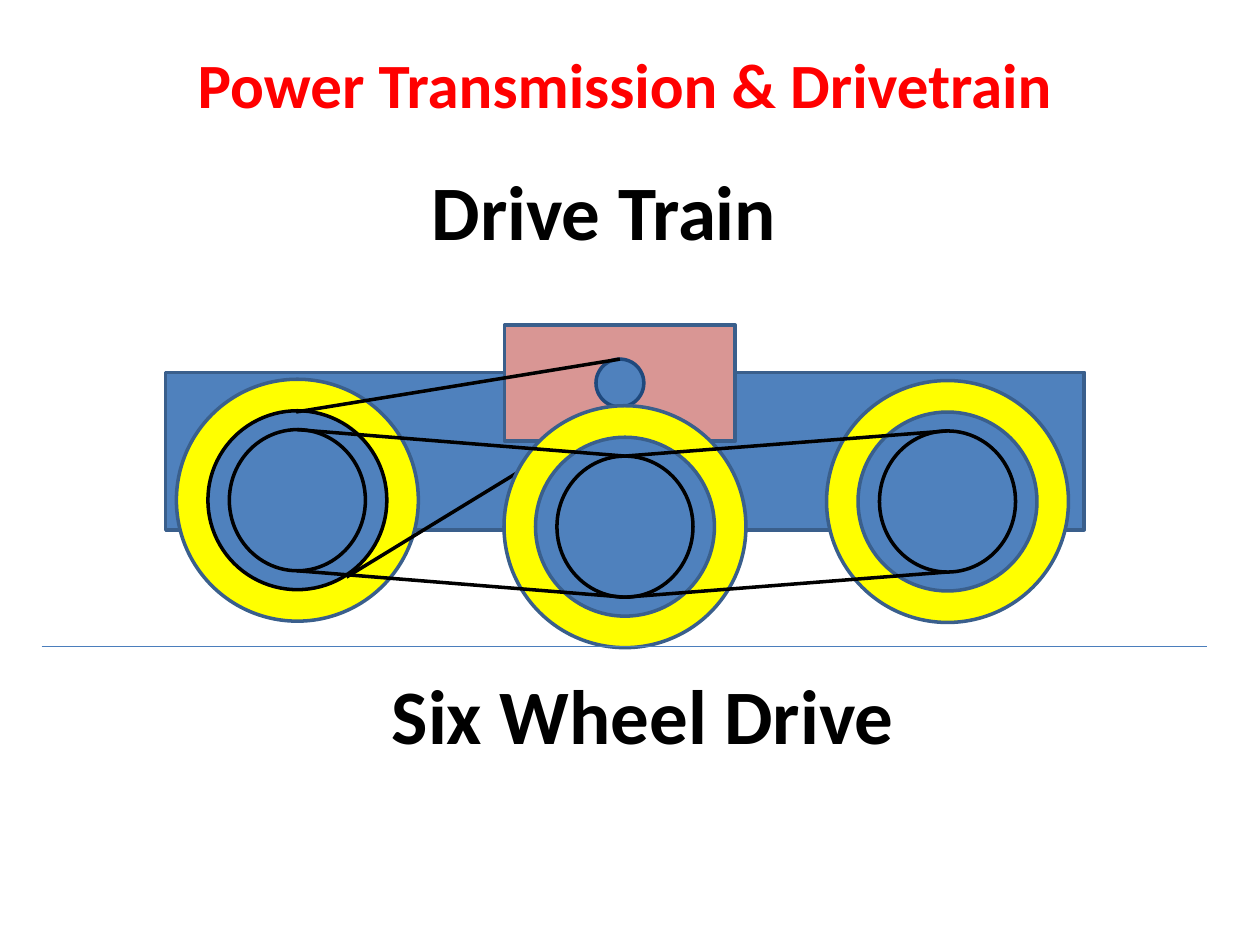
from pptx import Presentation
from pptx.dml.color import RGBColor
from pptx.enum.shapes import MSO_CONNECTOR, MSO_SHAPE
from pptx.enum.text import MSO_ANCHOR, PP_ALIGN
from pptx.oxml.ns import qn
from pptx.util import Inches, Pt

RECTANGLE, OVAL = MSO_SHAPE.RECTANGLE, MSO_SHAPE.OVAL
STRAIGHT = MSO_CONNECTOR.STRAIGHT
CENTER = PP_ALIGN.CENTER
MIDDLE, TOP = MSO_ANCHOR.MIDDLE, MSO_ANCHOR.TOP

BLACK = RGBColor(0x00, 0x00, 0x00)
RED = RGBColor(0xFF, 0x00, 0x00)
YELLOW = RGBColor(0xFF, 0xFF, 0x00)
BLUE = RGBColor(0x4F, 0x81, 0xBD)
EDGE_BLUE = RGBColor(0x3A, 0x5F, 0x8C)
DARK_BLUE = RGBColor(0x1F, 0x49, 0x7D)
GROUND_BLUE = RGBColor(0x4B, 0x7E, 0xBC)
PINK = RGBColor(0xD9, 0x96, 0x94)

TIRE, HUB = 1.92, 1.42
SPROCKET_WIDTH, SPROCKET_HEIGHT = 1.08, 1.12
LEFT_AXLE, MIDDLE_AXLE, RIGHT_AXLE = (2.36, 3.97), (4.96, 4.18), (7.52, 3.98)


def write_text(shape, text, size, color=BLACK, anchor=TOP):
    """Fill a text shape with one bold, centred line."""
    frame = shape.text_frame
    frame.word_wrap = True
    frame.vertical_anchor = anchor
    paragraph = frame.paragraphs[0]
    paragraph.alignment = CENTER
    run = paragraph.add_run()
    run.text = text
    run.font.name = "Calibri"
    run.font.size = Pt(size)
    run.font.bold = True
    run.font.color.rgb = color


def add_title(slide, text):
    """Place and format the title placeholder."""
    title = slide.shapes.title
    title.left, title.top = Inches(0.17), Inches(0.25)
    title.width, title.height = Inches(9.58), Inches(0.83)
    write_text(title, text, 36, color=RED, anchor=MIDDLE)


def add_caption(slide, text, left, top):
    """Add a large caption."""
    box = slide.shapes.add_textbox(Inches(left), Inches(top), Inches(7.83), Inches(0.84))
    write_text(box, text, 44)


def add_part(slide, kind, center, width, height, fill=BLUE, line=EDGE_BLUE):
    """Add an outlined shape around a centre point."""
    x, y = center
    part = slide.shapes.add_shape(
        kind, Inches(x - width / 2), Inches(y - height / 2), Inches(width), Inches(height)
    )
    part.shadow.inherit = False
    part.fill.solid()
    part.fill.fore_color.rgb = fill
    part.line.color.rgb = line
    part.line.width = Pt(2)


def add_wheel(slide, axle, hub_line=EDGE_BLUE):
    """Add a tire, its hub and its sprocket on one axle."""
    add_part(slide, OVAL, axle, TIRE, TIRE, fill=YELLOW)
    add_part(slide, OVAL, axle, HUB, HUB, line=hub_line)
    add_part(slide, OVAL, axle, SPROCKET_WIDTH, SPROCKET_HEIGHT, line=BLACK)


def add_line(slide, start, end, color=BLACK, width=2):
    """Add a straight line between two points."""
    line = slide.shapes.add_connector(STRAIGHT, *map(Inches, (*start, *end)))
    line.line.color.rgb = color
    line.line.width = Pt(width)
    properties = line._element.spPr
    properties.append(properties.makeelement(qn("a:effectLst"), {}))


def add_belt(slide, first_axle, second_axle):
    """Join the tops and the bottoms of two sprockets."""
    for offset in (-SPROCKET_HEIGHT / 2, SPROCKET_HEIGHT / 2):
        start, end = [(x, y + offset) for x, y in (first_axle, second_axle)]
        add_line(slide, start, end)


def main():
    """Build the six wheel drive slide."""
    presentation = Presentation()
    presentation.slide_width, presentation.slide_height = Inches(10), Inches(7.5)
    slide = presentation.slides.add_slide(presentation.slide_layouts[5])

    add_title(slide, "Power Transmission & Drivetrain")
    add_caption(slide, "Drive Train", 0.88, 1.25)
    add_caption(slide, "Six Wheel Drive", 1.19, 5.25)

    add_part(slide, RECTANGLE, (4.96, 3.58), 7.29, 1.25)
    add_part(slide, RECTANGLE, (4.92, 3.04), 1.83, 0.92, fill=PINK)
    add_part(slide, OVAL, (4.92, 3.04), 0.38, 0.38, line=DARK_BLUE)

    add_wheel(slide, LEFT_AXLE, hub_line=BLACK)
    add_wheel(slide, RIGHT_AXLE)
    add_line(slide, (2.35, 3.27), (4.92, 2.85))
    add_line(slide, (2.75, 4.58), (4.96, 3.23))
    add_wheel(slide, MIDDLE_AXLE)

    add_belt(slide, LEFT_AXLE, MIDDLE_AXLE)
    add_belt(slide, MIDDLE_AXLE, RIGHT_AXLE)
    add_line(slide, (0.33, 5.13), (9.58, 5.13), color=GROUND_BLUE, width=0.75)
    presentation.save("out.pptx")


if __name__ == "__main__":
    main()
